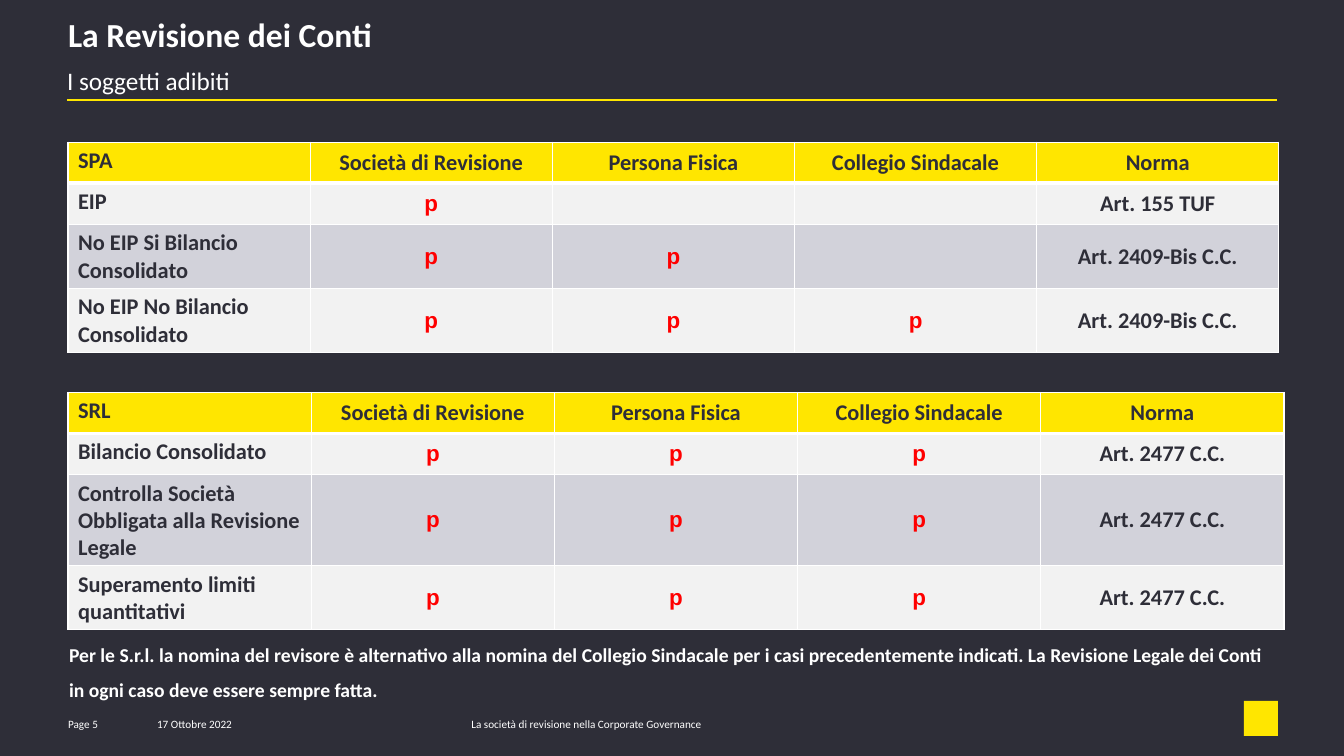
from lxml import etree
from pptx import Presentation
from pptx.dml.color import RGBColor
from pptx.enum.shapes import MSO_CONNECTOR, MSO_SHAPE
from pptx.enum.text import MSO_ANCHOR, PP_ALIGN
from pptx.oxml.ns import qn
from pptx.util import Pt

STRAIGHT = MSO_CONNECTOR.STRAIGHT
RECTANGLE = MSO_SHAPE.RECTANGLE
TOP, MIDDLE = MSO_ANCHOR.TOP, MSO_ANCHOR.MIDDLE
LEFT, CENTER = PP_ALIGN.LEFT, PP_ALIGN.CENTER

SCALE = 9080
TITLE_ONLY = 5
COLORS = {
    "background": "2E2E38",
    "yellow": "FFE600",
    "white": "FFFFFF",
    "dark": "2E2E38",
    "red": "FF0000",
    "light": "F2F2F2",
    "gray": "D2D2DA",
}
MARK = "p"
HEADINGS = ["Società di Revisione", "Persona Fisica", "Collegio Sindacale", "Norma"]
SPA_ROWS = [
    ["SPA", *HEADINGS],
    ["EIP", MARK, "", "", "Art. 155 TUF"],
    ["No EIP Si Bilancio Consolidato", MARK, MARK, "", "Art. 2409-Bis C.C."],
    ["No EIP No Bilancio Consolidato", MARK, MARK, MARK, "Art. 2409-Bis C.C."],
]
SRL_CASES = [
    "Bilancio Consolidato",
    "Controlla Società Obbligata alla Revisione Legale",
    "Superamento limiti quantitativi",
]
SRL_ROWS = [["SRL", *HEADINGS]] + [
    [case, MARK, MARK, MARK, "Art. 2477 C.C."] for case in SRL_CASES
]
FOOTERS = [
    ("Page 5", 68, 73),
    ("17 Ottobre 2022", 157, 131),
    ("La società di revisione nella Corporate Governance", 471, 340),
]
NOTE = (
    "Per le S.r.l. la nomina del revisore è alternativo alla nomina del Collegio "
    "Sindacale per i casi precedentemente indicati. La Revisione Legale dei Conti "
    "in ogni caso deve essere sempre fatta."
)


def px(value):
    return value * SCALE


def color(name):
    return RGBColor.from_string(COLORS[name])


class SlideBuilder:
    def __init__(self, slide, font="Calibri"):
        self.slide = slide
        self.font = font
        background = slide.background.fill
        background.solid()
        background.fore_color.rgb = color("background")

    def add_text(self, frame, text, size, bold=False, ink="white", font=None,
                 align=LEFT, anchor=TOP, spacing=1.0, before=0, after=0):
        frame.word_wrap = True
        frame.vertical_anchor = anchor
        paragraph = frame.paragraphs[0]
        paragraph.alignment = align
        paragraph.line_spacing = spacing
        paragraph.space_before = Pt(before)
        paragraph.space_after = Pt(after)
        run = paragraph.add_run()
        run.text = text
        run.font.name = font or self.font
        run.font.size = Pt(size)
        run.font.bold = bold
        run.font.color.rgb = color(ink)

    def set_margins(self, frame, left, top, right, bottom):
        frame.margin_left, frame.margin_top = px(left), px(top)
        frame.margin_right, frame.margin_bottom = px(right), px(bottom)

    def title(self, text, left, top, width, height):
        shape = self.slide.shapes.title
        shape.left, shape.top = px(left), px(top)
        shape.width, shape.height = px(width), px(height)
        self.set_margins(shape.text_frame, 0, 0, 0, 0)
        self.add_text(shape.text_frame, text, 24, bold=True, spacing=0.85)

    def text(self, text, left, top, width, height, size, margins=(0, 0, 0, 0), **style):
        shape = self.slide.shapes.add_textbox(px(left), px(top), px(width), px(height))
        self.set_margins(shape.text_frame, *margins)
        self.add_text(shape.text_frame, text, size, **style)

    def line(self, left, top, right, bottom, ink, width):
        connector = self.slide.shapes.add_connector(
            STRAIGHT, px(left), px(top), px(right), px(bottom))
        connector.line.color.rgb = color(ink)
        connector.line.width = Pt(width)
        etree.SubElement(connector._element.spPr, qn("a:effectLst"))

    def block(self, left, top, width, height, fill):
        shape = self.slide.shapes.add_shape(
            RECTANGLE, px(left), px(top), px(width), px(height))
        shape.shadow.inherit = False
        shape.fill.solid()
        shape.fill.fore_color.rgb = color(fill)
        shape.line.fill.background()

    def borders(self, cell, top, bottom):
        properties = cell._tc.get_or_add_tcPr()
        for side, width in (("L", 1), ("R", 1), ("T", top), ("B", bottom)):
            border = etree.SubElement(properties, qn(f"a:ln{side}"), w=str(Pt(width)))
            fill = etree.SubElement(border, qn("a:solidFill"))
            etree.SubElement(fill, qn("a:srgbClr"), val=COLORS["white"])

    def cell(self, cell, text, row, column):
        self.borders(cell, 3 if row == 1 else 1, 3 if row == 0 else 1)
        cell.fill.solid()
        fill = "yellow" if row == 0 else ("gray", "light")[row % 2]
        cell.fill.fore_color.rgb = color(fill)
        if not text:
            return
        is_mark = text == MARK
        self.add_text(cell.text_frame, text, 16, bold=True,
                      ink="red" if is_mark else "dark",
                      font="Arial" if is_mark else None,
                      align=CENTER if column else LEFT)
        cell.vertical_anchor = MIDDLE if column else TOP

    def table(self, rows, left, top, column_width, heights):
        columns = len(rows[0])
        table = self.slide.shapes.add_table(
            len(rows), columns, px(left), px(top),
            px(column_width * columns), px(sum(heights))).table
        for column in table.columns:
            column.width = px(column_width)
        for row, (texts, height) in enumerate(zip(rows, heights)):
            table.rows[row].height = px(height)
            for column, text in enumerate(texts):
                self.cell(table.cell(row, column), text, row, column)


def main():
    presentation = Presentation()
    presentation.slide_width = px(1343)
    presentation.slide_height = px(755)
    slide = presentation.slides.add_slide(presentation.slide_layouts[TITLE_ONLY])
    builder = SlideBuilder(slide)

    builder.block(1243, 700, 34, 35, "yellow")
    builder.line(67, 100, 1276, 100, "yellow", 1.5)
    builder.title("La Revisione dei Conti", 68, 20, 1209, 37)
    builder.text("I soggetti adibiti", 67, 66, 657, 30, 18,
                 margins=(0, 4, 0, 0), spacing=0.85, after=6)
    builder.table(SPA_ROWS, 68, 142, 242, [41, 41, 64, 64])
    builder.table(SRL_ROWS, 68, 392, 243, [41, 41, 91, 64])
    builder.text(NOTE, 59, 625, 1218, 78, 14, margins=(10, 5, 10, 5),
                 bold=True, spacing=1.5, before=4, after=4)
    for text, left, width in FOOTERS:
        builder.text(text, left, 713, width, 20, 8, anchor=MIDDLE)

    presentation.save("out.pptx")


if __name__ == "__main__":
    main()
